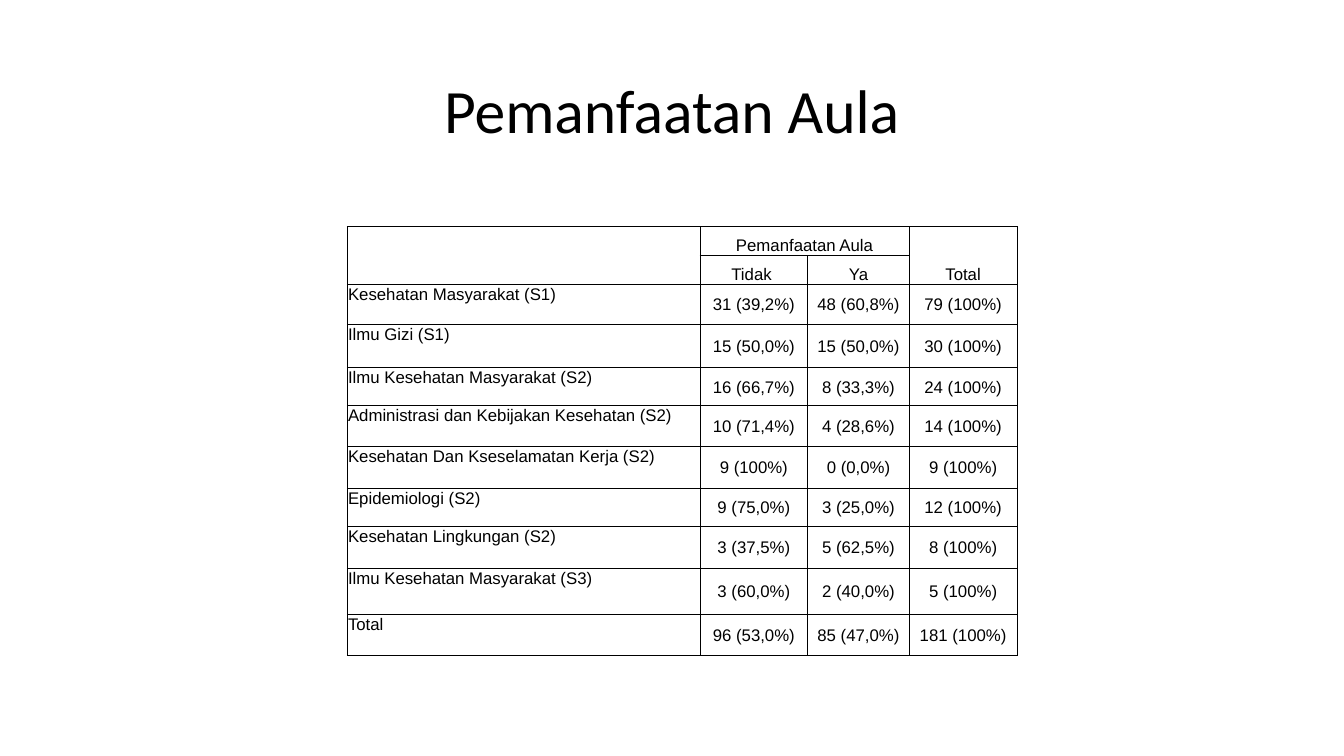
import pptx
import pptx.dml.color
import pptx.enum.text
import pptx.util
from lxml import etree
from pptx.oxml.ns import qn

Pt = pptx.util.Pt
PP_ALIGN = pptx.enum.text.PP_ALIGN
ANCHOR = pptx.enum.text.MSO_ANCHOR
BLACK = pptx.dml.color.RGBColor(0, 0, 0)

TITLE = "Pemanfaatan Aula"
ROWS = [
    ("", "Pemanfaatan Aula", "", "Total"),
    ("", "Tidak ", "Ya", ""),
    ("Kesehatan Masyarakat (S1)", "31 (39,2%)", "48 (60,8%)", "79 (100%)"),
    ("Ilmu Gizi (S1)", "15 (50,0%)", "15 (50,0%)", "30 (100%)"),
    ("Ilmu Kesehatan Masyarakat (S2)", "16 (66,7%)", "8 (33,3%)", "24 (100%)"),
    ("Administrasi dan Kebijakan Kesehatan (S2)", "10 (71,4%)", "4 (28,6%)", "14 (100%)"),
    ("Kesehatan Dan Kseselamatan Kerja (S2)", "9 (100%)", "0 (0,0%)", "9 (100%)"),
    ("Epidemiologi (S2)", "9 (75,0%)", "3 (25,0%)", "12 (100%)"),
    ("Kesehatan Lingkungan (S2)", "3 (37,5%)", "5 (62,5%)", "8 (100%)"),
    ("Ilmu Kesehatan Masyarakat (S3)", "3 (60,0%)", "2 (40,0%)", "5 (100%)"),
    ("Total", "96 (53,0%)", "85 (47,0%)", "181 (100%)"),
]
HEADER_ROWS = 2
MERGES = [((0, 0), (1, 0)), ((0, 1), (0, 2)), ((0, 3), (1, 3))]
COL_WIDTHS = [252, 77, 72.5, 77]
ROW_HEIGHTS = [20.6, 20.6, 28.5, 31.2, 27.2, 29.2, 30, 27.2, 30, 32.8, 29.4]
TABLE_LEFT, TABLE_TOP = 248, 161.8


def style_paragraph(p, name, size, align):
    p.alignment = align
    p.font.name = name
    p.font.size = Pt(size)
    p.font.color.rgb = BLACK


def add_borders(cell):
    tc_pr = cell._tc.get_or_add_tcPr()
    for side in ("lnL", "lnR", "lnT", "lnB"):
        ln = etree.SubElement(tc_pr, qn("a:" + side), w=str(Pt(0.5)))
        fill = etree.SubElement(ln, qn("a:solidFill"))
        etree.SubElement(fill, qn("a:srgbClr"), val=str(BLACK))


def fill_cell(cell, text, row, col):
    cell.margin_left = cell.margin_right = cell.margin_top = Pt(0.6)
    cell.margin_bottom = 0
    if row < HEADER_ROWS:
        cell.vertical_anchor = ANCHOR.BOTTOM
    else:
        cell.vertical_anchor = ANCHOR.MIDDLE if col else ANCHOR.TOP
    add_borders(cell)
    cell.fill.background()
    cell.text = text
    style_paragraph(cell.text_frame.paragraphs[0], "Arial", 12,
                    PP_ALIGN.CENTER if col else PP_ALIGN.LEFT)


def add_title(s):
    tf = s.shapes.add_textbox(Pt(66), Pt(28.8), Pt(828), Pt(104.4)).text_frame
    tf.word_wrap = True
    tf.vertical_anchor = ANCHOR.MIDDLE
    p = tf.paragraphs[0]
    p.text = TITLE
    p.line_spacing = 0.9
    style_paragraph(p, "Calibri", 44, PP_ALIGN.CENTER)


def add_usage_table(s):
    table = s.shapes.add_table(
        len(ROWS), len(COL_WIDTHS), Pt(TABLE_LEFT), Pt(TABLE_TOP),
        Pt(sum(COL_WIDTHS)), Pt(sum(ROW_HEIGHTS))).table
    table.first_row = table.horz_banding = False
    for column, width in zip(table.columns, COL_WIDTHS):
        column.width = Pt(width)
    for row, height in zip(table.rows, ROW_HEIGHTS):
        row.height = Pt(height)
    for r, texts in enumerate(ROWS):
        for c, text in enumerate(texts):
            fill_cell(table.cell(r, c), text, r, c)
    for first, last in MERGES:
        table.cell(*first).merge(table.cell(*last))


def main():
    prs = pptx.Presentation()
    prs.slide_width, prs.slide_height = Pt(960), Pt(540)
    s = prs.slides.add_slide(prs.slide_layouts[6])
    add_title(s)
    add_usage_table(s)
    prs.save("out.pptx")


if __name__ == "__main__":
    main()
